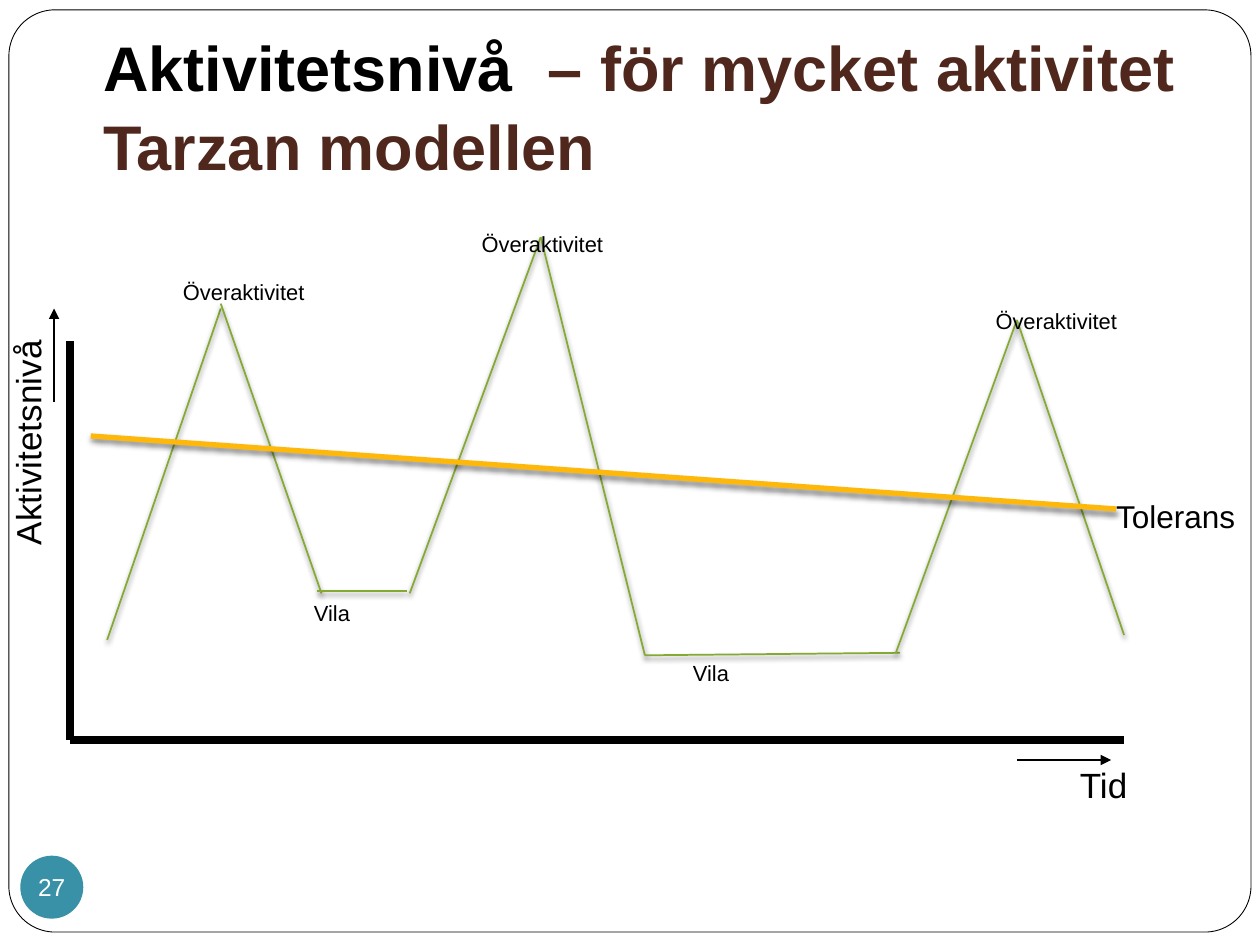
"""Build the activity level slide showing overactivity peaks, rest and tolerance over time."""
from lxml import etree
from pptx import Presentation
from pptx import util as u
from pptx.dml.color import RGBColor
from pptx.enum import shapes, text
from pptx.oxml.ns import qn

FONT = "Arial"
BLACK, WHITE, BROWN = "000000", "FFFFFF", "4F271C"
GREEN, AMBER, TEAL = "84AA33", "FEB80A", "3891A7"

TITLE_LINES = [
    [("Aktivitetsnivå", BLACK), ("  – för mycket aktivitet", BROWN)],
    [("Tarzan modellen", BROWN)],
]
ACTIVITY = [
    (2.16, 12.9, 4.45, 6.22), (4.45, 6.12, 6.48, 11.96),
    (6.4, 11.91, 8.2, 11.91), (8.26, 11.96, 10.9, 4.78),
    (10.9, 4.78, 13, 13.21), (13, 13.21, 18.14, 13.16),
    (18.06, 13.16, 20.5, 6.45), (20.5, 6.45, 22.66, 12.8),
]
TOLERANCE = (1.83, 8.79, 22.5, 10.26)
AXES = [(1.42, 6.88, 1.42, 14.91), (22.66, 14.91, 1.42, 14.91)]
ARROWS = [(1.09, 8.1, 1.09, 6.22), (20.5, 15.32, 22.4, 15.32)]
REST = [(6.2, 12.01), (13.84, 13.21)]
PEAKS = [(3.56, 5.54), (19.94, 6.12), (9.58, 4.57)]


def rgb(color):
    return RGBColor.from_string(color)


def add_run(p, words, size, color, bold=False):
    r = p.add_run()
    r.text = words
    r.font.name, r.font.size, r.font.bold = FONT, u.Pt(size), bold
    r.font.color.rgb = rgb(color)


def set_margins(tf, left, top, right, bottom):
    tf.margin_left, tf.margin_top = u.Cm(left), u.Cm(top)
    tf.margin_right, tf.margin_bottom = u.Cm(right), u.Cm(bottom)


def add_label(s, words, box, size, margins=(0.13, 0.08), wrap=True):
    tf = s.shapes.add_textbox(*map(u.Cm, box)).text_frame
    tf.word_wrap = wrap
    set_margins(tf, *margins, *margins)
    add_run(tf.paragraphs[0], words, size, BLACK)
    return tf


def add_line(s, ends, color, width, shadow=False, arrow=False):
    line = s.shapes.add_connector(shapes.MSO_CONNECTOR.STRAIGHT, *map(u.Cm, ends))
    line.line.color.rgb, line.line.width = rgb(color), u.Pt(width)
    if arrow:
        etree.SubElement(line.line._get_or_add_ln(), qn("a:tailEnd"), type="triangle")
    effects = etree.SubElement(line.element.spPr, qn("a:effectLst"))
    if shadow:
        outer = etree.SubElement(effects, qn("a:outerShdw"), blurRad=str(u.Pt(3)),
                                 dist=str(u.Pt(2)), dir="5400000", rotWithShape="0")
        tint = etree.SubElement(outer, qn("a:srgbClr"), val=BLACK)
        etree.SubElement(tint, qn("a:alpha"), val="50000")


def add_panel(s, kind, box, fill):
    sp = s.shapes.add_shape(kind, *map(u.Cm, box))
    sp.shadow.inherit = False
    sp.fill.solid()
    sp.fill.fore_color.rgb = rgb(fill)
    sp.line.fill.background()
    return sp


def add_title(s):
    title = s.shapes.title
    title.left, title.top, title.width, title.height = map(u.Cm, (1.83, 0.76, 22.3, 3.18))
    tf = title.text_frame
    tf.word_wrap, tf.auto_size = True, text.MSO_AUTO_SIZE.NONE
    tf.vertical_anchor = text.MSO_ANCHOR.BOTTOM
    set_margins(tf, 0.25, 0.13, 0.25, 0.25)
    p = tf.paragraphs[0]
    p.alignment, p.line_spacing = text.PP_ALIGN.LEFT, 1.05
    for i, runs in enumerate(TITLE_LINES):
        if i:
            p.add_line_break()
        for words, color in runs:
            add_run(p, words, 36, color, bold=True)
    return title


def add_frame(s, title):
    frame = add_panel(s, shapes.MSO_SHAPE.ROUNDED_RECTANGLE, (0.18, 0.2, 25.04, 18.59), WHITE)
    frame.adjustments[0] = 0.05
    frame.line.color.rgb, frame.line.width = rgb(BLACK), u.Pt(0.5)
    title.element.addprevious(frame.element)


def add_diagram(s):
    for ends in ACTIVITY:
        add_line(s, ends, GREEN, 1, shadow=True)
    for spot in REST:
        add_label(s, "Vila", (*spot, 2.74, 1.35), 12.5)
    add_line(s, TOLERANCE, AMBER, 3, shadow=True)
    for spot in PEAKS:
        add_label(s, "Överaktivitet", (*spot, 5.46, 1.35), 12.5)
    for ends in AXES:
        add_line(s, ends, BLACK, 4.5)
    level = add_label(s, "Aktivitetsnivå", (0, 3.81, 5.51, 7.26), 20)
    level._txBody.bodyPr.set("vert", "vert270")
    add_label(s, "Tid", (21.64, 15.32, 2.84, 1.07), 20)
    for ends in ARROWS:
        add_line(s, ends, BLACK, 0.75, arrow=True)
    tolerance = add_label(s, "Tolerans", (22.25, 9.88, 2.95, 1.8), 18, (0.25, 0.13), wrap=False)
    tolerance.auto_size = text.MSO_AUTO_SIZE.SHAPE_TO_FIT_TEXT


def add_page_number(s):
    tf = add_panel(s, shapes.MSO_SHAPE.OVAL, (0.41, 17.25, 1.27, 1.27), TEAL).text_frame
    tf.word_wrap, tf.vertical_anchor = False, text.MSO_ANCHOR.MIDDLE
    set_margins(tf, 0, 0, 0, 0)
    p = tf.paragraphs[0]
    p.alignment = text.PP_ALIGN.CENTER
    add_run(p, "27", 14, WHITE)


def main():
    prs = Presentation()
    prs.slide_width, prs.slide_height = u.Cm(25.4), u.Cm(19.05)
    s = prs.slides.add_slide(prs.slide_layouts[5])
    add_frame(s, add_title(s))
    add_diagram(s)
    add_page_number(s)
    prs.save("out.pptx")


if __name__ == "__main__":
    main()
